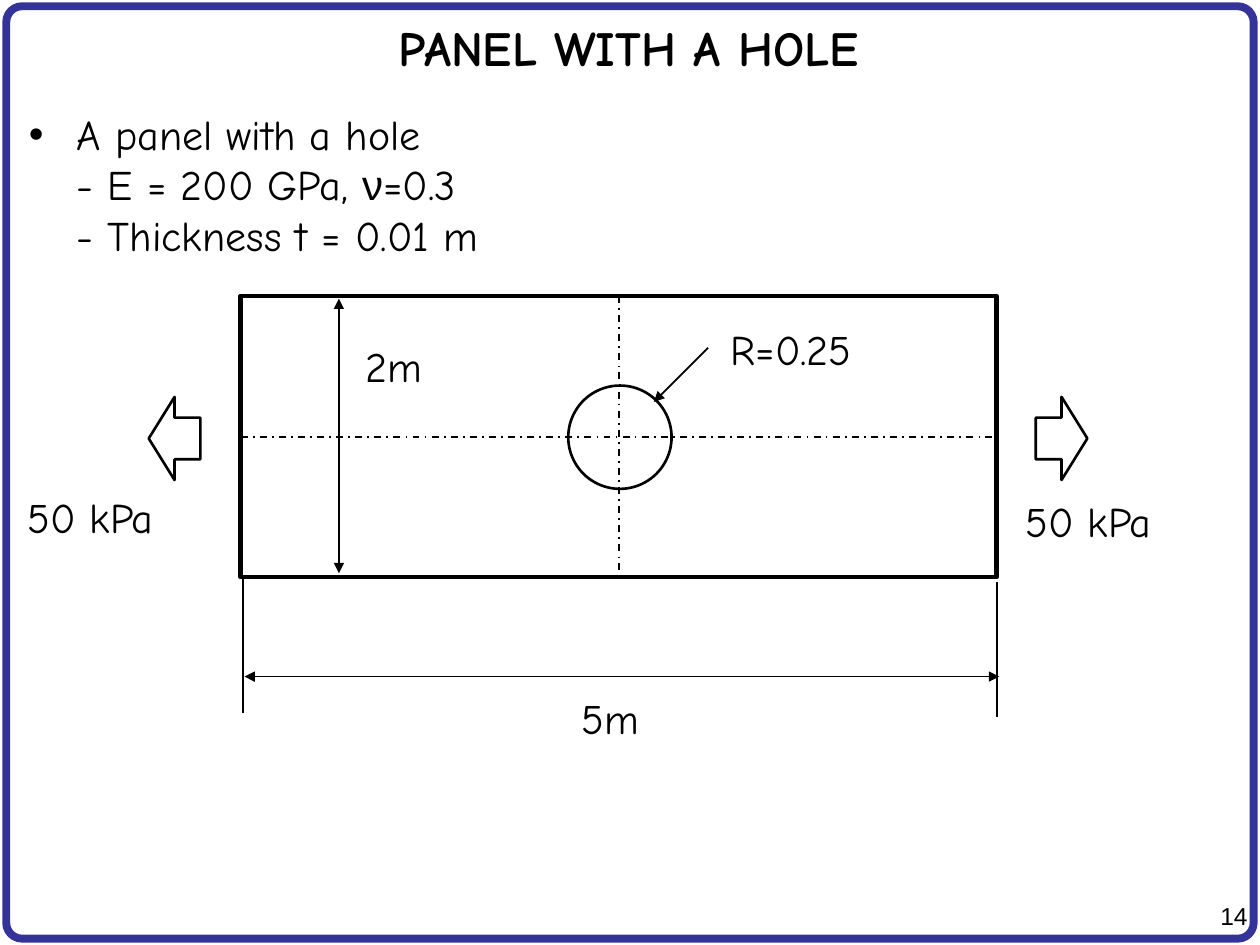
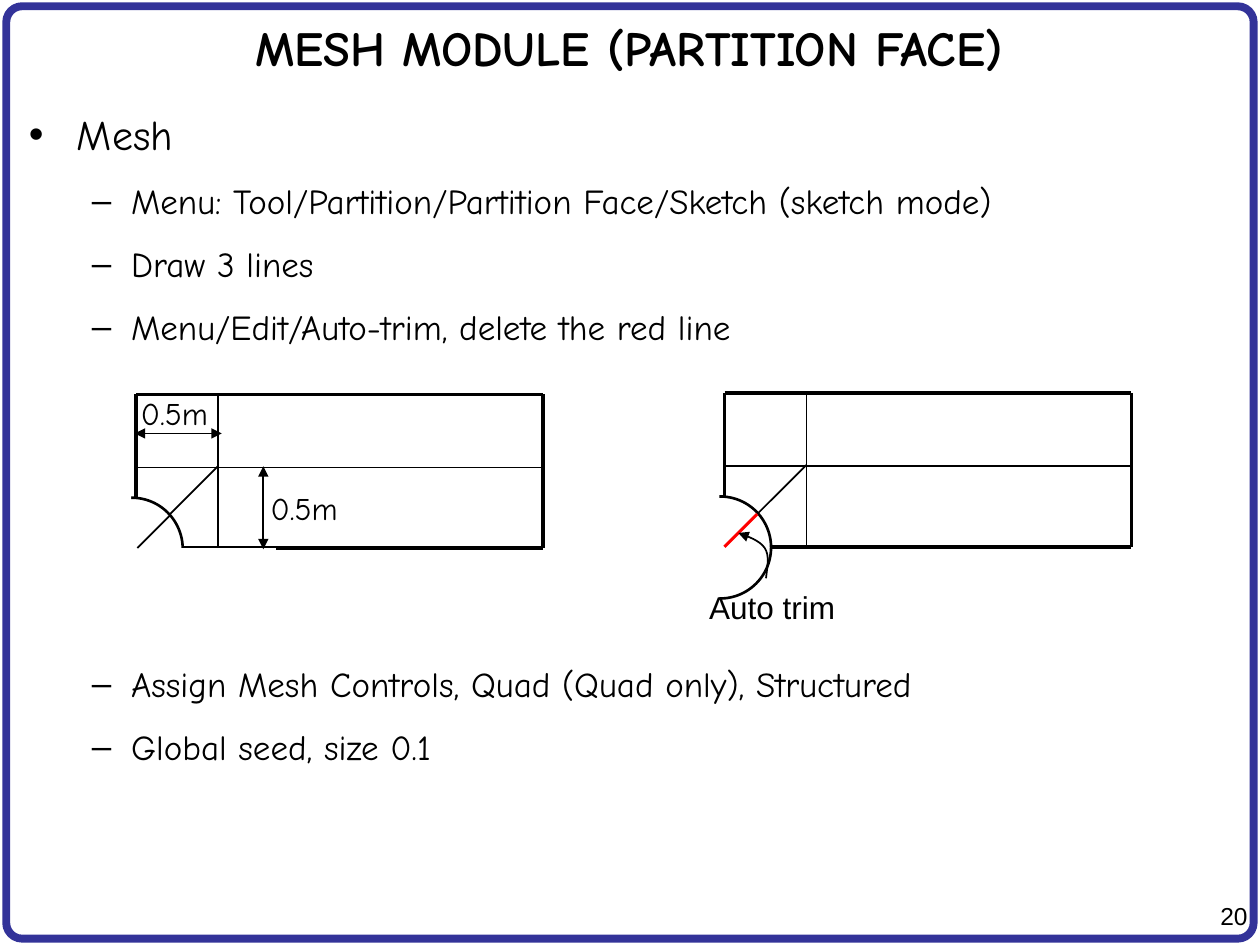
"""Build two finite element tutorial slides: the panel problem and its mesh partition."""
from dataclasses import dataclass
from typing import Optional

from pptx import Presentation
from pptx import util as u
from pptx.dml.color import RGBColor
from pptx.enum import dml, shapes, text
from pptx.oxml import parse_xml
from pptx.oxml.ns import nsdecls, qn

BLACK = RGBColor(0x00, 0x00, 0x00)
WHITE = RGBColor(0xFF, 0xFF, 0xFF)
RED = RGBColor(0xFF, 0x00, 0x00)
FRAME_BLUE = RGBColor(0x33, 0x33, 0x99)
HAND_FONT = "Comic Neue"
PLAIN_FONT = "Arial"
LEVEL_SIZES = (24, 20)
LEVEL_INDENTS = ((0.38, -0.38), (0.81, -0.31))
PRESET = shapes.MSO_SHAPE
Point = tuple[float, float]


@dataclass(frozen=True)
class Stroke:
    start: Point
    end: Point
    width: float = 1
    color: RGBColor = BLACK
    dashed: bool = False
    arrows: tuple[str, ...] = ()


@dataclass(frozen=True)
class Label:
    wording: str
    left: float
    top: float
    width: float
    height: float = 0.5
    size: float = 24
    font: str = HAND_FONT


@dataclass(frozen=True)
class Outline:
    preset: PRESET
    left: float
    top: float
    width: float
    height: float
    line_width: float = 0
    line_color: RGBColor = BLACK
    fill: Optional[RGBColor] = None
    rotation: float = 0


@dataclass(frozen=True)
class Item:
    wording: str
    level: int = 0
    space_before: float = 12


BOTH_ENDS = ("headEnd", "tailEnd")
FRAME = Outline(PRESET.ROUNDED_RECTANGLE, 0.05, 0.05, 9.9, 7.4, 4.5, FRAME_BLUE)

PANEL_OUTLINES = (
    Outline(PRESET.RECTANGLE, 1.91, 2.35, 6, 2.23, 2.75),
    Outline(PRESET.OVAL, 4.51, 3.06, 0.82, 0.82, 1.5),
    Outline(PRESET.RIGHT_ARROW, 8.22, 3.15, 0.41, 0.66, 1.5),
    Outline(PRESET.RIGHT_ARROW, 1.18, 3.15, 0.41, 0.66, 1.5, rotation=180),
)
PANEL_STROKES = (
    Stroke((1.93, 4.59), (1.93, 5.66)),
    Stroke((7.91, 4.62), (7.91, 5.69)),
    Stroke((1.94, 5.37), (7.93, 5.37), arrows=BOTH_ENDS),
    Stroke((2.69, 2.37), (2.69, 4.55), arrows=BOTH_ENDS),
    Stroke((4.91, 2.35), (4.91, 4.58), dashed=True),
    Stroke((1.91, 3.47), (7.91, 3.47), dashed=True),
    Stroke((5.19, 3.19), (5.62, 2.76), arrows=("headEnd",)),
)
PANEL_LABELS = (
    Label("2m", 2.8, 2.65, 0.67),
    Label("5m", 4.52, 5.45, 0.67),
    Label("50 kPa", 8.04, 3.88, 1.24),
    Label("50 kPa", 0.12, 3.85, 1.24),
    Label("R=0.25", 5.7, 2.52, 1.29),
)

QUARTER_HOLE = Outline(PRESET.OVAL, -0.44, 0.82, 0.81, 0.81, 1.5)
QUARTER_EDGES = (
    Stroke((0, 0), (0, 0.82), 2),
    Stroke((0.38, 1.22), (3.23, 1.22), 2),
    Stroke((3.23, 0), (3.23, 1.22), 2),
    Stroke((0, 0), (3.23, 0), 2),
)
BOTTOM_MASK = Outline(PRESET.RECTANGLE, -0.4, 1.22, 1.51, 0.65, fill=WHITE)
LEFT_MASK = Outline(PRESET.RECTANGLE, -0.73, 0.33, 0.69, 1.38, fill=WHITE)
PARTITIONS = (
    Stroke((0.65, 1.22), (0.65, 0)),
    Stroke((0, 0.58), (3.22, 0.58)),
    Stroke((0.65, 0.57), (0.27, 0.95)),
)
MESH_STROKES = (
    Stroke((2.09, 3.7), (2.09, 4.36), arrows=BOTH_ENDS),
    Stroke((1.07, 3.44), (1.76, 3.44), arrows=BOTH_ENDS),
    Stroke((6.01, 4.08), (5.75, 4.34), 1.75, RED),
    Stroke((1.35, 4.09), (1.09, 4.35)),
)
MESH_LABELS = (
    Label("0.5m", 2.05, 3.83, 0.77, 0.4, 18),
    Label("0.5m", 1.02, 3.08, 0.77, 0.4, 18),
    Label("Auto trim", 5.53, 4.62, 1.21, 0.4, 18, PLAIN_FONT),
)
TRIM_CURVES = (
    ((6.08, 4.59), (6.09, 4.5), (6.11, 4.41), (6.07, 4.35)),
    ((6.07, 4.35), (6.03, 4.29), (5.94, 4.26), (5.86, 4.23)),
)
MESH_ITEMS = (
    Item("Mesh"),
    Item("Menu: Tool/Partition/Partition Face/Sketch (sketch mode)", 1),
    Item("Draw 3 lines", 1),
    Item("Menu/Edit/Auto-trim, delete the red line", 1),
    Item("Assign Mesh Controls, Quad (Quad only), Structured", 1, 180),
    Item("Global seed, size 0.1", 1),
)


def style_runs(paragraph, size: float, font: str = HAND_FONT, bold: bool = False) -> None:
    for run in paragraph.runs:
        run.font.size = u.Pt(size)
        run.font.name = font
        run.font.bold = bold
        run.font.color.rgb = BLACK


def place(shape, left: float, top: float, width: float, height: float) -> None:
    shape.left, shape.top = u.Inches(left), u.Inches(top)
    shape.width, shape.height = u.Inches(width), u.Inches(height)


def add_arrowheads(shape, ends: tuple[str, ...]) -> None:
    outline = shape.element.spPr.find(qn("a:ln"))
    for end in ends:
        outline.append(parse_xml(f'<a:{end} {nsdecls("a")} type="triangle"/>'))


def draw_stroke(canvas, stroke: Stroke, origin: Point = (0, 0)) -> None:
    ends = [u.Inches(point[axis] + origin[axis])
            for point in (stroke.start, stroke.end) for axis in (0, 1)]
    connector = canvas.add_connector(shapes.MSO_CONNECTOR.STRAIGHT, *ends)
    connector.line.width = u.Pt(stroke.width)
    connector.line.color.rgb = stroke.color
    if stroke.dashed:
        connector.line.dash_style = dml.MSO_LINE.DASH_DOT
    add_arrowheads(connector, stroke.arrows)
    connector.element.spPr.append(parse_xml(f'<a:effectLst {nsdecls("a")}/>'))


def draw_outline(canvas, outline: Outline, origin: Point = (0, 0)):
    shape = canvas.add_shape(
        outline.preset,
        u.Inches(outline.left + origin[0]), u.Inches(outline.top + origin[1]),
        u.Inches(outline.width), u.Inches(outline.height))
    shape.shadow.inherit = False
    shape.rotation = outline.rotation
    if outline.fill is None:
        shape.fill.background()
    else:
        shape.fill.solid()
        shape.fill.fore_color.rgb = outline.fill
    if outline.line_width:
        shape.line.width = u.Pt(outline.line_width)
        shape.line.color.rgb = outline.line_color
    else:
        shape.line.fill.background()
    return shape


def draw_label(slide, label: Label, wrap: bool = False):
    box = slide.shapes.add_textbox(
        u.Inches(label.left), u.Inches(label.top),
        u.Inches(label.width), u.Inches(label.height))
    frame = box.text_frame
    frame.word_wrap = wrap
    frame.auto_size = text.MSO_AUTO_SIZE.SHAPE_TO_FIT_TEXT
    frame.text = label.wording
    style_runs(frame.paragraphs[0], label.size, label.font)
    return frame.paragraphs[0]


def format_item(paragraph, level: int, space_before: float = 12) -> None:
    paragraph.level = level
    paragraph.space_before = u.Pt(space_before)
    margin, indent = LEVEL_INDENTS[level]
    properties = paragraph._p.get_or_add_pPr()
    properties.set("marL", str(u.Inches(margin)))
    properties.set("indent", str(u.Inches(indent)))
    style_runs(paragraph, LEVEL_SIZES[level])


def start_slide(deck, heading: str, number: int):
    slide = deck.slides.add_slide(deck.slide_layouts[1])
    title, body = slide.placeholders[0], slide.placeholders[1]
    frame = draw_outline(slide.shapes, FRAME)
    frame.adjustments[0] = 0.017
    title.element.addprevious(frame.element)
    page = draw_label(slide, Label(str(number), 9.46, 7.1, 0.54, 0.33, 14, PLAIN_FONT), wrap=True)
    page.alignment = text.PP_ALIGN.RIGHT

    place(title, 0.04, 0.05, 9.9, 0.65)
    title.text_frame.text = heading
    title.text_frame.auto_size = text.MSO_AUTO_SIZE.NONE
    title.text_frame.vertical_anchor = text.MSO_ANCHOR.MIDDLE
    title.text_frame.paragraphs[0].alignment = text.PP_ALIGN.CENTER
    style_runs(title.text_frame.paragraphs[0], 28, bold=True)

    place(body, 0.13, 0.81, 9.74, 6.42)
    body.text_frame.auto_size = text.MSO_AUTO_SIZE.NONE
    return slide, body.text_frame


def draw_quarter(slide, origin: Point, masks: tuple[Outline, ...]) -> None:
    canvas = slide.shapes.add_group_shape().shapes
    draw_outline(canvas, QUARTER_HOLE, origin)
    for edge in QUARTER_EDGES:
        draw_stroke(canvas, edge, origin)
    for mask in masks:
        draw_outline(canvas, mask, origin)
    for partition in PARTITIONS:
        draw_stroke(canvas, partition, origin)


def curve_point(curve: tuple[Point, ...], t: float) -> Point:
    weights = ((1 - t) ** 3, 3 * t * (1 - t) ** 2, 3 * t * t * (1 - t), t ** 3)
    x, y = (sum(w * point[axis] for w, point in zip(weights, curve)) for axis in (0, 1))
    return u.Inches(x), u.Inches(y)


def draw_trim_arrow(slide) -> None:
    steps = 8
    points = [curve_point(curve, step / steps)
              for curve in TRIM_CURVES for step in range(1, steps + 1)]
    builder = slide.shapes.build_freeform(*curve_point(TRIM_CURVES[0], 0))
    builder.add_line_segments(points, close=False)
    arrow = builder.convert_to_shape()
    arrow.shadow.inherit = False
    arrow.fill.background()
    arrow.line.width = u.Pt(1)
    arrow.line.color.rgb = BLACK
    add_arrowheads(arrow, ("tailEnd",))


def build_panel_slide(deck) -> None:
    slide, body = start_slide(deck, "PANEL WITH A HOLE", 14)
    givens = body.paragraphs[0]
    givens.text = "A panel with a hole\v- E = 200 GPa, "
    poisson = givens.add_run()
    poisson.text = "ν"
    givens.add_run().text = "=0.3"
    givens.add_line_break()
    givens.add_run().text = "- Thickness t = 0.01 m"
    format_item(givens, 0)
    poisson.font.name = PLAIN_FONT
    for outline in PANEL_OUTLINES:
        draw_outline(slide.shapes, outline)
    for stroke in PANEL_STROKES:
        draw_stroke(slide.shapes, stroke)
    for label in PANEL_LABELS:
        draw_label(slide, label)


def build_mesh_slide(deck) -> None:
    slide, body = start_slide(deck, "MESH MODULE (PARTITION FACE)", 20)
    body.text = "\n".join(item.wording for item in MESH_ITEMS)
    for paragraph, item in zip(body.paragraphs, MESH_ITEMS):
        format_item(paragraph, item.level, item.space_before)
    draw_quarter(slide, (5.75, 3.12), (LEFT_MASK,))
    draw_quarter(slide, (1.08, 3.13), (BOTTOM_MASK, LEFT_MASK))
    for stroke in MESH_STROKES:
        draw_stroke(slide.shapes, stroke)
    draw_trim_arrow(slide)
    for label in MESH_LABELS:
        draw_label(slide, label)


def main() -> None:
    deck = Presentation()
    deck.slide_width, deck.slide_height = u.Inches(10), u.Inches(7.5)
    build_panel_slide(deck)
    build_mesh_slide(deck)
    deck.save("out.pptx")


if __name__ == "__main__":
    main()
